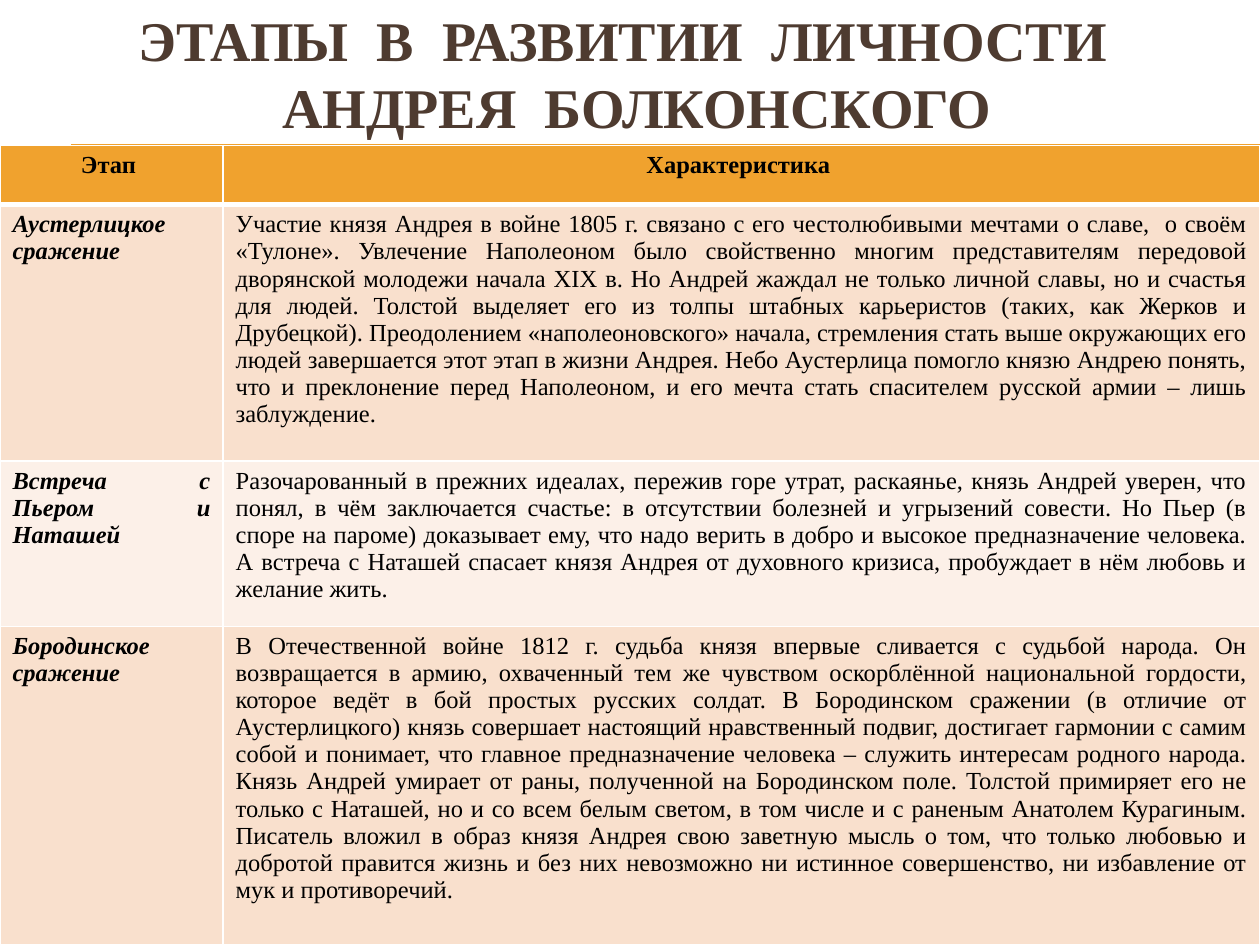
"""Build the slide on the stages of Andrei Bolkonsky's development."""
from dataclasses import dataclass

from lxml import etree
from pptx import Presentation
from pptx.dml.color import RGBColor
from pptx.enum.shapes import MSO_CONNECTOR
from pptx.enum.text import MSO_ANCHOR, MSO_AUTO_SIZE, PP_ALIGN
from pptx.oxml.ns import qn
from pptx.util import Pt

CENTER, JUSTIFY = PP_ALIGN.CENTER, PP_ALIGN.JUSTIFY
MIDDLE = MSO_ANCHOR.MIDDLE
NO_AUTOFIT = MSO_AUTO_SIZE.NONE
STRAIGHT = MSO_CONNECTOR.STRAIGHT
FONT = "Times New Roman"
BORDER = "FFFFFF"
ACCENT = "F0A22E"
COLUMN_WIDTHS = (127.5, 592.5)
TABLE_TOP = 83
RULE_LEFT, RULE_RIGHT = 40.5, 720
RULE_TOPS = (82.8, 83.5)


@dataclass
class Row:
    stage: str
    description: str
    height: float
    fill: str
    header: bool = False


ROWS = [
    Row("Этап ", "Характеристика ", 34, ACCENT, header=True),
    Row(
        "Аустерлицкое сражение",
        "Участие князя Андрея в войне 1805 г. связано с его честолюбивыми мечтами о славе,  о своём "
        "«Тулоне». Увлечение Наполеоном было свойственно многим представителям передовой дворянской "
        "молодежи начала XIX в. Но Андрей жаждал не только личной славы, но и счастья для людей. "
        "Толстой выделяет его из толпы штабных карьеристов (таких, как Жерков и Друбецкой). "
        "Преодолением «наполеоновского» начала, стремления стать выше окружающих его людей "
        "завершается этот этап в жизни Андрея. Небо Аустерлица помогло князю Андрею понять, что и "
        "преклонение перед Наполеоном, и его мечта стать спасителем русской армии – лишь заблуждение.",
        146.5, "F9E0CD",
    ),
    Row(
        "Встреча с Пьером и Наташей",
        "Разочарованный в прежних идеалах, пережив горе утрат, раскаянье, князь Андрей уверен, что "
        "понял, в чём заключается счастье: в отсутствии болезней и угрызений совести. Но Пьер (в "
        "споре на пароме) доказывает ему, что надо верить в добро и высокое предназначение человека. "
        "А встреча с Наташей спасает князя Андрея от духовного кризиса, пробуждает в нём любовь и "
        "желание жить.",
        94.5, "FCF0E8",
    ),
    Row(
        "Бородинское сражение",
        "В Отечественной войне 1812 г. судьба князя впервые сливается с судьбой народа. Он "
        "возвращается в армию, охваченный тем же чувством оскорблённой национальной гордости, "
        "которое ведёт в бой простых русских солдат. В Бородинском сражении (в отличие от "
        "Аустерлицкого) князь совершает настоящий нравственный подвиг, достигает гармонии с самим "
        "собой и понимает, что главное предназначение человека – служить интересам родного народа. "
        "Князь Андрей умирает от раны, полученной на Бородинском поле. Толстой примиряет его не "
        "только с Наташей, но и со всем белым светом, в том числе и с раненым Анатолем Курагиным. "
        "Писатель вложил в образ князя Андрея свою заветную мысль о том, что только любовью и "
        "добротой правится жизнь и без них невозможно ни истинное совершенство, ни избавление от "
        "мук и противоречий.",
        182, "F9E0CD",
    ),
]


def rgb(value: str) -> RGBColor:
    return RGBColor.from_string(value)


def format_paragraph(paragraph, size: float, color: str, align, bold: bool, italic: bool = False) -> None:
    paragraph.alignment = align
    font = paragraph.font
    font.name, font.size, font.bold, font.italic = FONT, Pt(size), bold, italic
    font.color.rgb = rgb(color)


def add_rule(slide, top: float) -> None:
    rule = slide.shapes.add_connector(STRAIGHT, Pt(RULE_LEFT), Pt(top), Pt(RULE_RIGHT), Pt(top))
    rule.line.color.rgb = rgb(ACCENT)
    rule.line.width = Pt(0.75)
    etree.SubElement(rule._element.spPr, qn("a:effectLst"))


def add_borders(cell, bottom: float) -> None:
    properties = cell._tc.get_or_add_tcPr()
    for side, width in (("L", 1), ("R", 1), ("T", 1), ("B", bottom)):
        line = etree.SubElement(properties, qn(f"a:ln{side}"), w=str(Pt(width)))
        fill = etree.SubElement(line, qn("a:solidFill"))
        etree.SubElement(fill, qn("a:srgbClr"), val=BORDER)


def fill_row(table, index: int, row: Row) -> None:
    table.rows[index].height = Pt(row.height)
    for column, text in enumerate((row.stage, row.description)):
        cell = table.cell(index, column)
        add_borders(cell, bottom=3 if row.header else 1)
        cell.fill.solid()
        cell.fill.fore_color.rgb = rgb(row.fill)
        paragraph = cell.text_frame.paragraphs[0]
        paragraph.text = text
        is_stage = column == 0
        format_paragraph(paragraph, 14, "000000", CENTER if row.header else JUSTIFY,
                         bold=row.header or is_stage, italic=is_stage and not row.header)


def add_title(slide) -> None:
    title = slide.shapes.title
    title.left, title.top, title.width, title.height = Pt(31.3), Pt(0), Pt(657.5), Pt(TABLE_TOP)
    frame = title.text_frame
    frame.auto_size = NO_AUTOFIT
    frame.word_wrap = True
    frame.vertical_anchor = MIDDLE
    paragraph = frame.paragraphs[0]
    paragraph.text = "ЭТАПЫ  В  РАЗВИТИИ  ЛИЧНОСТИ \v АНДРЕЯ  БОЛКОНСКОГО"
    format_paragraph(paragraph, 32, "4E3B30", CENTER, bold=True)


def add_stage_table(slide) -> None:
    height = sum(row.height for row in ROWS)
    table = slide.shapes.add_table(
        len(ROWS), len(COLUMN_WIDTHS), Pt(0), Pt(TABLE_TOP), Pt(sum(COLUMN_WIDTHS)), Pt(height)
    ).table
    for column, width in zip(table.columns, COLUMN_WIDTHS):
        column.width = Pt(width)
    for index, row in enumerate(ROWS):
        fill_row(table, index, row)


def main() -> None:
    presentation = Presentation()
    presentation.slide_width, presentation.slide_height = Pt(720), Pt(540)
    slide = presentation.slides.add_slide(presentation.slide_layouts.get_by_name("Title Only"))
    for top in RULE_TOPS:
        add_rule(slide, top)
    add_title(slide)
    add_stage_table(slide)
    presentation.save("out.pptx")


if __name__ == "__main__":
    main()
